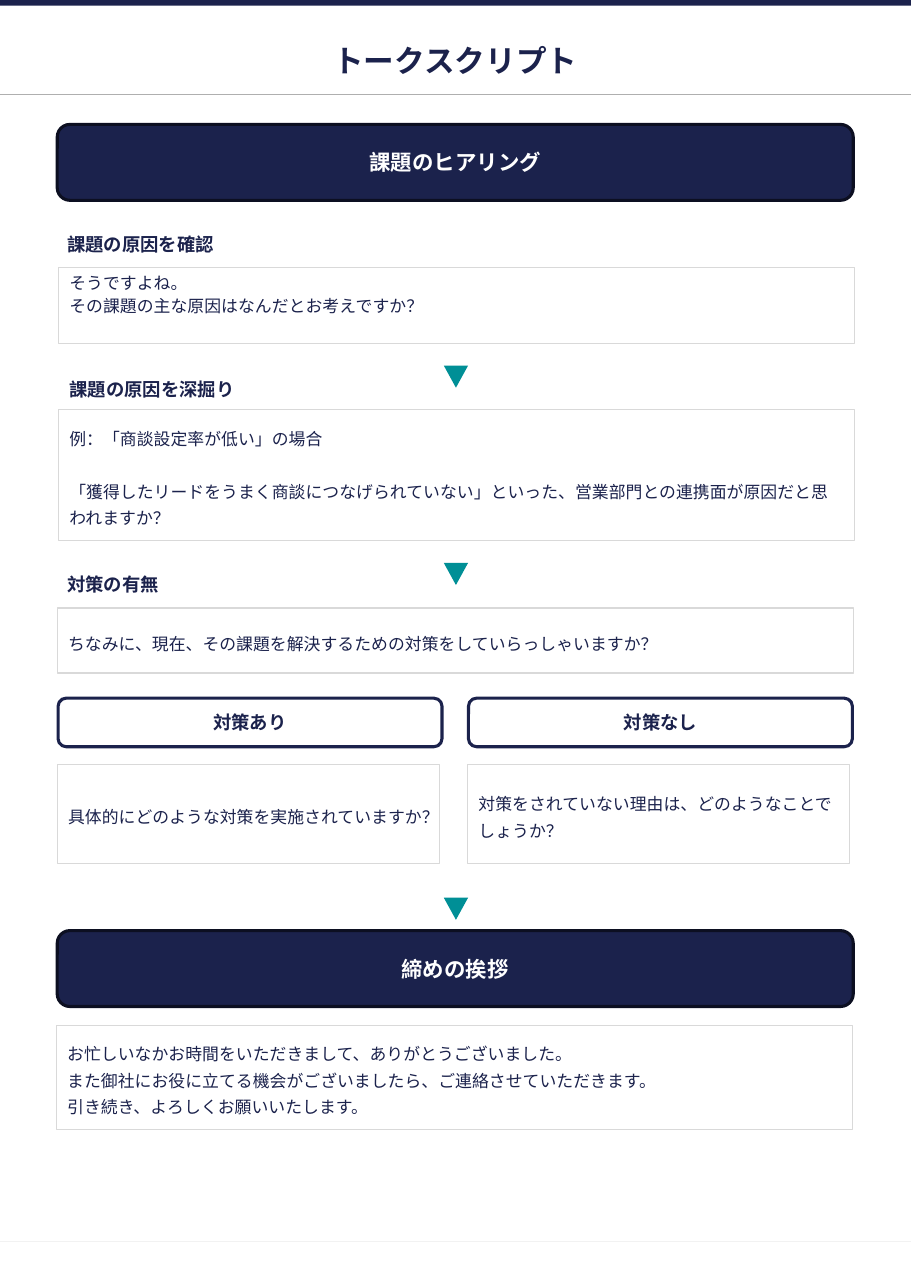
from dataclasses import dataclass
from lxml.etree import SubElement
from pptx import Presentation
from pptx.dml.color import RGBColor as RGB
from pptx.enum.shapes import MSO_CONNECTOR as Link, MSO_SHAPE as Form
from pptx.enum.text import MSO_ANCHOR as Anchor, PP_ALIGN as Align
from pptx.oxml.ns import qn
from pptx.util import Cm, Pt

# Content: tops and heights in cm
TITLE = "トークスクリプト"
BANNERS = [
    (2.87, "課題のヒアリング"),
    (21.46, "締めの挨拶"),
]
HEADS = [  # left, top, height, text
    (1.3, 5.03, 1.07, "課題の原因を確認"),
    (1.35, 8.36, 1.07, "課題の原因を深掘り"),
    (1.3, 12.98, 0.84, "対策の有無"),
]
ARROWS = [8.43, 12.98, 20.7]
OPENING = ["そうですよね。", "その課題の主な原因はなんだとお考えですか？"]
DETAIL = [
    "例：「商談設定率が低い」の場合",
    "「獲得したリードをうまく商談につなげられていない」といった、"
    "営業部門との連携面が原因だと思われますか？",
]
CHECK = ["ちなみに、現在、その課題を解決するための対策をしていらっしゃいますか？"]
CLOSING = [
    "お忙しいなかお時間をいただきまして、ありがとうございました。",
    "また御社にお役に立てる機会がございましたら、ご連絡させていただきます。",
    "引き続き、よろしくお願いいたします。",
]
BRANCHES = [
    ("対策あり", "具体的にどのような対策を実施されていますか？"),
    ("対策なし", "対策をされていない理由は、どのようなことでしょうか？"),
]


@dataclass(frozen=True)
class Theme:
    font: str = "Noto Sans CJK JP"
    navy: str = "1B224C"
    edge: str = "0C0F21"
    teal: str = "008F96"
    white: str = "FFFFFF"
    frame: str = "D9D9D9"
    rule: str = "AFAFAF"
    foot: str = "F2F2F2"
    title: int = 20
    banner: int = 14
    head: int = 12
    body: int = 11


T = Theme()
WIDE, TALL = 21.0, 29.7
LEFT, SPAN = 1.32, 18.35
STEP, COL = 9.46, 8.85

deck = Presentation()
deck.slide_width, deck.slide_height = Cm(WIDE), Cm(TALL)
slide = deck.slides.add_slide(deck.slide_layouts[5])


def write(frame, lines, size, color, bold=False, align=Align.LEFT,
          pitch=1.0, gap=0):
    frame.word_wrap = True
    frame.vertical_anchor = Anchor.MIDDLE
    for i, line in enumerate(lines):
        para = frame.paragraphs[0] if i == 0 else frame.add_paragraph()
        para.alignment, para.line_spacing = align, pitch
        para.space_before = Pt(gap if i else 0)
        run = para.add_run()
        run.text = line
        font = run.font
        font.name, font.size, font.bold = T.font, Pt(size), bold
        font.color.rgb = RGB.from_string(color)
        SubElement(font._element, qn("a:ea"), typeface=T.font)


def block(form, x, y, w, h, fill, line=None, weight=0.75):
    item = slide.shapes.add_shape(form, Cm(x), Cm(y), Cm(w), Cm(h))
    item.shadow.inherit = False
    item.fill.solid()
    item.fill.fore_color.rgb = RGB.from_string(fill)
    if line:
        item.line.color.rgb = RGB.from_string(line)
        item.line.width = Pt(weight)
    else:
        item.line.fill.background()
    return item


def rule(y, color):
    item = slide.shapes.add_connector(
        Link.STRAIGHT, Cm(0), Cm(y), Cm(WIDE), Cm(y))
    item.line.color.rgb = RGB.from_string(color)
    item.line.width = Pt(0.75)
    SubElement(item._element.spPr, qn("a:effectLst"))


def label(x, y, w, h, text, size, fill, line, color):
    item = block(Form.ROUNDED_RECTANGLE, x, y, w, h, fill, line, 2)
    write(item.text_frame, [text], size, color, True, Align.CENTER)


def speech(x, y, w, h, lines, pitch=1.3, gap=0):
    item = block(Form.RECTANGLE, x, y, w, h, T.white, T.frame)
    write(item.text_frame, lines, T.body, T.navy, pitch=pitch, gap=gap)
    return item.text_frame


# Page frame and title
rule(28.63, T.foot)
block(Form.RECTANGLE, 0, 0, WIDE, 0.13, T.navy)
rule(2.18, T.rule)
title = slide.shapes.title
title.left, title.top = Cm(LEFT), Cm(0.86)
title.width, title.height = Cm(SPAN), Cm(1.07)
frame = title.text_frame
frame.margin_left = frame.margin_right = Cm(0.1)
frame.margin_top = frame.margin_bottom = Cm(0.1)
write(frame, [TITLE], T.title, T.navy, True, Align.CENTER)

# Section banners
for y, text in BANNERS:
    label(LEFT, y, SPAN, 1.75, text, T.banner, T.navy, T.edge, T.white)

# Step headings
for x, y, h, text in HEADS:
    item = block(Form.RECTANGLE, x, y, 6.32, h, T.white)
    write(item.text_frame, [text], T.head, T.navy, True, pitch=1.3)

# Spoken lines
first = speech(1.35, 6.17, SPAN, 1.75, OPENING, pitch=1.15)
first.vertical_anchor, first.margin_top = Anchor.TOP, Cm(0.04)
speech(1.35, 9.45, SPAN, 3.02, DETAIL, gap=17.3)
speech(LEFT, 14.02, SPAN, 1.5, CHECK)
speech(1.3, 23.65, SPAN, 2.39, CLOSING)

# Two branches
for i, (name, line) in enumerate(BRANCHES):
    x = LEFT + i * STEP
    label(x + 0.02, 16.1, COL, 1.12, name, T.head, T.white, T.navy, T.navy)
    speech(x, 17.63, COL - 0.04, 2.29, [line])

# Down arrows
for y in ARROWS:
    mark = block(Form.ISOSCELES_TRIANGLE, 10.23, y, 0.56, 0.51, T.teal)
    mark.rotation = 180

deck.save("out.pptx")
